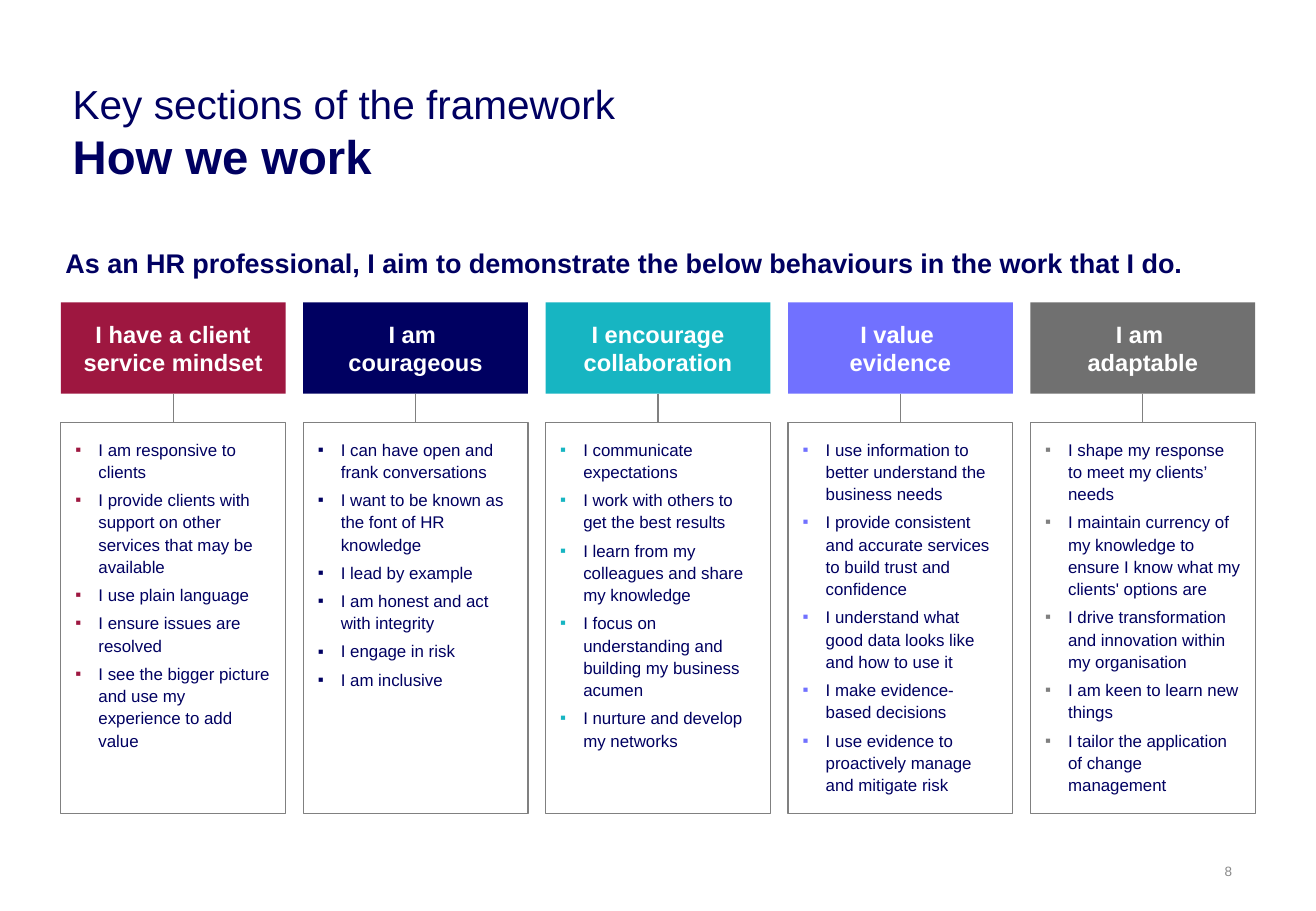
"""Build the "How we work" slide: five behaviours, each with a bulleted list."""
from copy import deepcopy

from lxml.etree import SubElement
from pptx import Presentation
from pptx.dml.color import RGBColor
from pptx.enum.shapes import MSO_CONNECTOR as Connector, MSO_SHAPE as Shape
from pptx.enum.text import MSO_ANCHOR as Anchor, PP_ALIGN as Align
from pptx.oxml.ns import qn
from pptx.util import Inches, Pt

NAVY = RGBColor(0x00, 0x00, 0x61)
CRIMSON = RGBColor(0x9E, 0x17, 0x40)
TEAL = RGBColor(0x17, 0xB5, 0xC2)
VIOLET = RGBColor(0x71, 0x71, 0xFF)
DARK_GREY = RGBColor(0x70, 0x70, 0x70)
GREY = RGBColor(0x80, 0x80, 0x80)
PALE_GREY = RGBColor(0x89, 0x89, 0x89)
WHITE = RGBColor(0xFF, 0xFF, 0xFF)

LEFT, PITCH, WIDTH = 0.5, 1.995, 1.85
HEADER_TOP, HEADER_HEIGHT = 2.49, 0.75
LIST_TOP, LIST_HEIGHT = 3.48, 3.22

COLUMNS = [
    ("I have a client service mindset", CRIMSON, CRIMSON, [
        "I am responsive to clients",
        "I provide clients with support on other services that may be available",
        "I use plain language",
        "I ensure issues are resolved",
        "I see the bigger picture and use my experience to add value",
    ]),
    ("I am \ncourageous", NAVY, NAVY, [
        "I can have open and frank conversations",
        "I want to be known as the font of HR knowledge",
        "I lead by example",
        "I am honest and act with integrity",
        "I engage in risk",
        "I am inclusive",
    ]),
    ("I encourage collaboration", TEAL, TEAL, [
        "I communicate expectations",
        "I work with others to get the best results",
        "I learn from my colleagues and share my knowledge",
        "I focus on understanding and building my business acumen",
        "I nurture and develop my networks",
    ]),
    ("I value \nevidence", VIOLET, VIOLET, [
        "I use information to better understand the business needs",
        "I provide consistent and accurate services to build trust and confidence",
        "I understand what good data looks like and how to use it",
        "I make evidence-based decisions",
        "I use evidence to proactively manage and mitigate risk",
    ]),
    ("I am \nadaptable", DARK_GREY, GREY, [
        "I shape my response to meet my clients’ needs",
        "I maintain currency of my knowledge to ensure I know what my clients' options are",
        "I drive transformation and innovation within my organisation",
        "I am keen to learn new things",
        "I tailor the application of change management",
    ]),
]


def write(box, text, size, color=NAVY, bold=False, align=Align.LEFT,
          anchor=Anchor.TOP, margin=None, spacing=None, bullet=None):
    """Add one paragraph to a box, filling its empty first paragraph if there is one."""
    frame = box.text_frame
    frame.word_wrap = True
    frame.vertical_anchor = anchor
    if margin is not None:
        frame.margin_left = frame.margin_right = Inches(margin)
        frame.margin_top = frame.margin_bottom = Inches(margin)
    para = frame.paragraphs[0]
    if para.text:
        para = frame.add_paragraph()
        if bullet is not None:
            para.space_before = Pt(3.5)
    para.text = text
    para.alignment = align
    para.line_spacing = spacing
    if bullet is not None:
        props = para._p.get_or_add_pPr()
        props.set("marL", str(Inches(0.19)))
        props.set("indent", str(-Inches(0.19)))
        bullet_color = SubElement(props, qn("a:buClr"))
        SubElement(bullet_color, qn("a:srgbClr"), val=str(bullet))
        SubElement(props, qn("a:buFont"), typeface="Arial")
        SubElement(props, qn("a:buChar"), char="▪")
    for span in para.runs:
        span.font.name = "Arial"
        span.font.size = Pt(size)
        span.font.bold = bold
        span.font.color.rgb = color
    for line_break in para._p.findall(qn("a:br")):
        line_break.append(deepcopy(para.runs[0]._r.find(qn("a:rPr"))))


deck = Presentation()
deck.slide_width, deck.slide_height = Inches(10.83), Inches(7.5)
page = deck.slides.add_slide(deck.slide_layouts[6])

title = page.shapes.add_textbox(Inches(0.5), Inches(0.6), Inches(6.01), Inches(0.98))
write(title, "Key sections of the framework", size=24)
write(title, "How we work", size=28, bold=True)

intro = page.shapes.add_textbox(Inches(0.44), Inches(1.98), Inches(9.78), Inches(0.37))
write(intro, "As an HR professional, I aim to demonstrate the below behaviours "
      "in the work that I do.", size=16, bold=True)

for index, (heading, fill, bullet, behaviours) in enumerate(COLUMNS):
    left = LEFT + index * PITCH
    middle = Inches(left + WIDTH / 2)
    column = page.shapes.add_group_shape().shapes

    header = column.add_shape(Shape.RECTANGLE, Inches(left), Inches(HEADER_TOP),
                              Inches(WIDTH), Inches(HEADER_HEIGHT))
    header.shadow.inherit = False
    header.fill.solid()
    header.fill.fore_color.rgb = fill
    header.line.fill.background()
    write(header, heading, size=14, color=WHITE, bold=True, align=Align.CENTER,
          anchor=Anchor.MIDDLE, margin=0.12)

    panel = column.add_shape(Shape.RECTANGLE, Inches(left), Inches(LIST_TOP),
                             Inches(WIDTH), Inches(LIST_HEIGHT))
    panel.shadow.inherit = False
    panel.fill.background()
    for behaviour in behaviours:
        write(panel, behaviour, size=10, margin=0.12, spacing=1.1, bullet=bullet)

    stem = column.add_connector(Connector.STRAIGHT, middle,
                                Inches(HEADER_TOP + HEADER_HEIGHT),
                                middle, Inches(LIST_TOP))
    SubElement(stem._element.spPr, qn("a:effectLst"))
    for outlined in (panel, stem):
        outlined.line.color.rgb = GREY
        outlined.line.width = Pt(0.75)

number = page.shapes.add_textbox(Inches(9.43), Inches(6.93), Inches(0.71), Inches(0.39))
write(number, "8", size=8, color=PALE_GREY, align=Align.RIGHT,
      anchor=Anchor.MIDDLE, margin=0, spacing=Pt(16.4))

deck.save("out.pptx")
